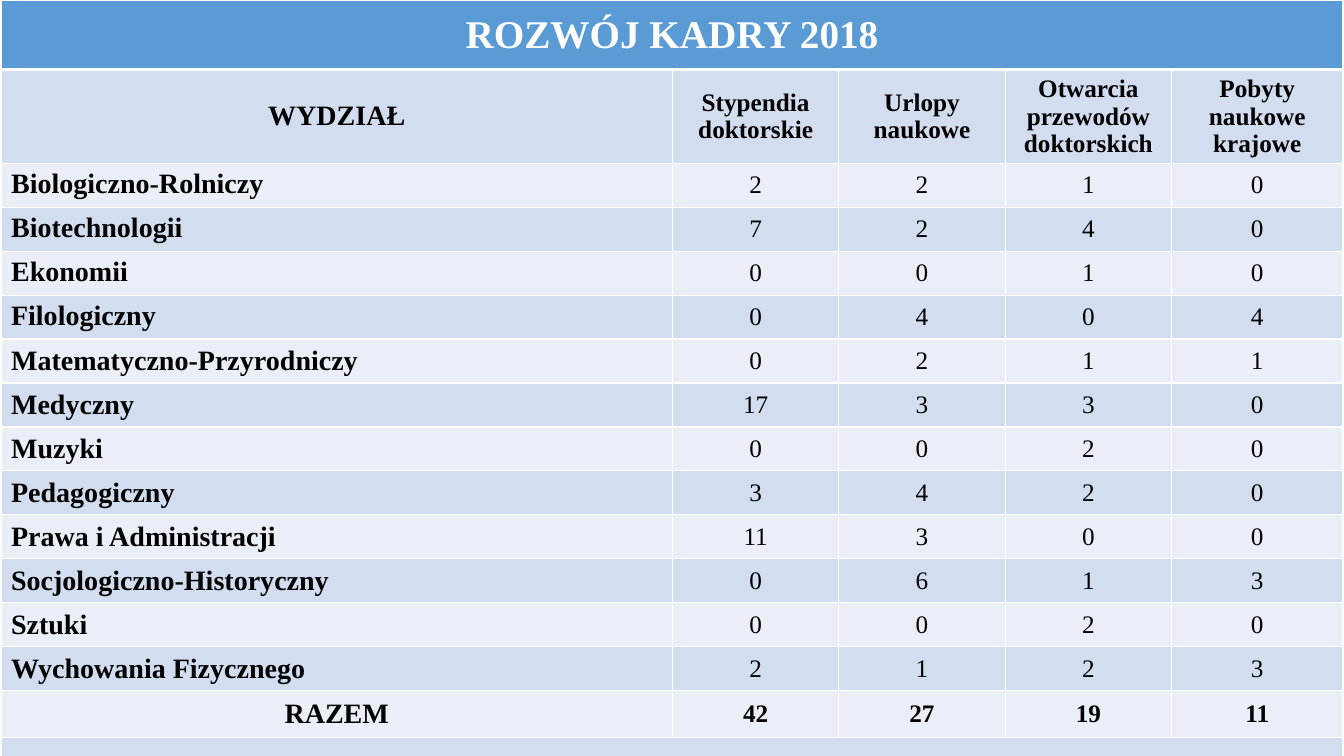
from lxml import etree
from pptx import Presentation
from pptx import util as u
from pptx.dml.color import RGBColor
from pptx.enum import text
from pptx.oxml.ns import qn

HUES = {"head": "5B9BD5", "dark": "D2DEEF", "pale": "EAEFF7",
        "white": "FFFFFF", "black": "000000"}
FONT = "Times New Roman"
COLS = [6.66, 1.65, 1.65, 1.65, 1.7]
STEP = 5.23 / 12
ROWS = [0.69, 0.93] + [STEP] * 12 + [0.47, 0.33]
TITLE = "ROZWÓJ KADRY 2018"
HEADS = ["WYDZIAŁ", "Stypendia doktorskie", "Urlopy naukowe",
         "Otwarcia przewodów doktorskich", "Pobyty naukowe krajowe"]
UNITS = [
    ("Biologiczno-Rolniczy", 2, 2, 1, 0),
    ("Biotechnologii", 7, 2, 4, 0),
    ("Ekonomii", 0, 0, 1, 0),
    ("Filologiczny", 0, 4, 0, 4),
    ("Matematyczno-Przyrodniczy", 0, 2, 1, 1),
    ("Medyczny", 17, 3, 3, 0),
    ("Muzyki", 0, 0, 2, 0),
    ("Pedagogiczny", 3, 4, 2, 0),
    ("Prawa i Administracji", 11, 3, 0, 0),
    ("Socjologiczno-Historyczny", 0, 6, 1, 3),
    ("Sztuki", 0, 0, 2, 0),
    ("Wychowania Fizycznego", 2, 1, 2, 3),
]
TOTAL = ["RAZEM"] + [sum(col) for col in list(zip(*UNITS))[1:]]
TOP_ROWS = 4  # leading faculty names that sit at the top of their cells


def paint(cell, hue, base=1):
    """Give a cell white borders and a fill; base is the lower border in points."""
    props = cell._tc.get_or_add_tcPr()
    for side, width in (("lnL", 1), ("lnR", 1), ("lnT", 1), ("lnB", base)):
        line = etree.SubElement(props, qn("a:" + side), w=str(u.Pt(width)))
        fill = etree.SubElement(line, qn("a:solidFill"))
        etree.SubElement(fill, qn("a:srgbClr"), val=HUES["white"])
    cell.fill.solid()
    cell.fill.fore_color.rgb = RGBColor.from_string(HUES[hue])


def write(cell, words, size, bold=True, hue="black", left=False, top=False):
    cell.vertical_anchor = text.MSO_ANCHOR.TOP if top else text.MSO_ANCHOR.MIDDLE
    para = cell.text_frame.paragraphs[0]
    para.alignment = text.PP_ALIGN.LEFT if left else text.PP_ALIGN.CENTER
    run = para.add_run()
    run.text = str(words)
    font = run.font
    font.name, font.size, font.bold = FONT, u.Pt(size), bold
    font.color.rgb = RGBColor.from_string(HUES[hue])


def add_grid(slide):
    frame = slide.shapes.add_table(len(ROWS), len(COLS), u.Inches(0.01), 0,
                                   u.Inches(sum(COLS)), u.Inches(sum(ROWS)))
    grid = frame.table
    for col, width in zip(grid.columns, COLS):
        col.width = u.Inches(width)
    for row, height in zip(grid.rows, ROWS):
        row.height = u.Inches(height)
    for r, row in enumerate(grid.rows):
        for cell in row.cells:
            if r == 0:
                paint(cell, "head", 3)
            else:
                paint(cell, "dark" if r % 2 else "pale")
    return grid


def fill_rows(grid):
    for r, row in enumerate([HEADS, *UNITS, TOTAL], 1):
        unit = 1 < r < len(UNITS) + 2
        for c, words in enumerate(row):
            name = c == 0
            write(grid.cell(r, c), words, 20 if name else 18,
                  bold=name or not unit, left=name and unit,
                  top=name and unit and r < TOP_ROWS + 2)


def main():
    deck = Presentation()
    deck.slide_width, deck.slide_height = u.Inches(13.33), u.Inches(7.5)
    slide = deck.slides.add_slide(deck.slide_layouts[6])
    grid = add_grid(slide)
    last = len(ROWS) - 1
    for r in (0, last):
        grid.cell(r, 0).merge(grid.cell(r, len(COLS) - 1))
    write(grid.cell(0, 0), TITLE, 28, hue="white")
    fill_rows(grid)
    for cell in grid.rows[last].cells:
        cell.margin_top = cell.margin_bottom = 0
    deck.save("out.pptx")


if __name__ == "__main__":
    main()
